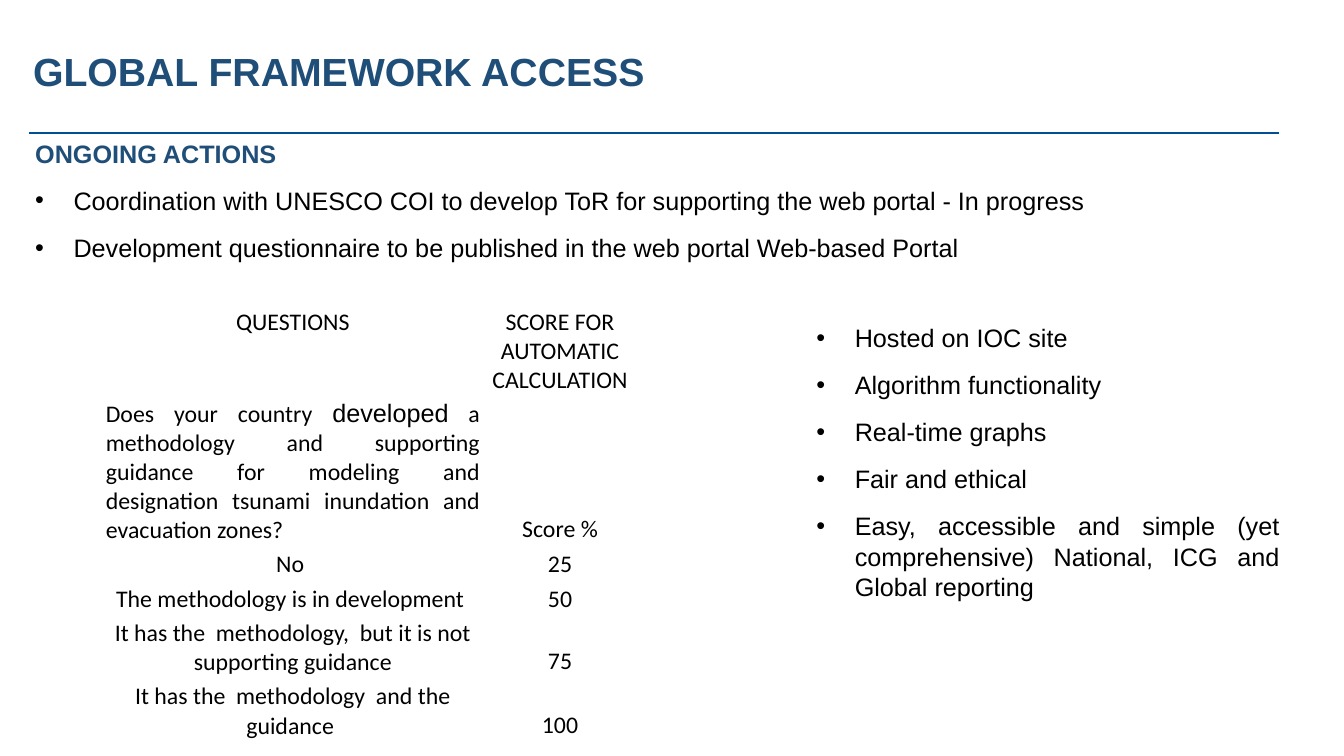
from lxml import etree
from pptx import Presentation
from pptx import util as u
from pptx.dml.color import RGBColor
from pptx.enum import shapes, text
from pptx.oxml.ns import qn

SLIDE_WIDTH, SLIDE_HEIGHT = u.Inches(13.33), u.Inches(7.5)
NAVY = RGBColor(0x1F, 0x4E, 0x79)
RULE_BLUE = RGBColor(0x01, 0x4F, 0x92)
BLACK = RGBColor(0x00, 0x00, 0x00)
LEFT, CENTER, JUSTIFY = (text.PP_ALIGN.LEFT, text.PP_ALIGN.CENTER,
                         text.PP_ALIGN.JUSTIFY)

ACTIONS = [
    "Coordination with UNESCO COI to develop ToR for supporting the web portal - In progress",
    "Development questionnaire to be published in the web portal Web-based Portal",
]
FEATURES = [
    "Hosted on IOC site",
    "Algorithm functionality",
    "Real-time graphs",
    "Fair and ethical",
    "Easy, accessible and simple (yet comprehensive) National, ICG and Global reporting",
]
HEADINGS = ("QUESTIONS", "SCORE FOR AUTOMATIC CALCULATION")
QUESTION = (
    "Does your country ",
    "developed",
    " a methodology and supporting guidance for modeling and designation"
    " tsunami inundation and evacuation zones?",
)
ANSWERS = [
    ("No ", "25"),
    ("The methodology is in development ", "50"),
    ("It has the  methodology,  but it is not supporting guidance", "75"),
    ("It has the  methodology  and the guidance ", "100"),
]


def across(percent):
    """Length as a percentage of the slide's width."""
    return round(SLIDE_WIDTH * percent / 100)


def down(percent):
    """Length as a percentage of the slide's height."""
    return round(SLIDE_HEIGHT * percent / 100)


def add_text(paragraph, wording, size=18, font="Arial", color=BLACK,
             bold=False, align=LEFT):
    paragraph.alignment = align
    run = paragraph.add_run()
    run.text = wording
    run.font.size = u.Pt(size)
    run.font.name = font
    run.font.color.rgb = color
    run.font.bold = bold


def next_paragraph(frame):
    """Return the first paragraph while it is unused, then new ones."""
    first = frame.paragraphs[0]
    return frame.add_paragraph() if first.runs else first


def space_around(paragraph):
    paragraph.space_before = paragraph.space_after = u.Pt(6)


def add_bullets(frame, items, indent, level=0):
    for item in items:
        paragraph = next_paragraph(frame)
        add_text(paragraph, item, align=JUSTIFY)
        space_around(paragraph)
        paragraph.level = level
        properties = paragraph._p.get_or_add_pPr()
        properties.set("marL", str(u.Inches(indent)))
        properties.set("indent", str(-u.Inches(0.38)))
        etree.SubElement(properties, qn("a:buFont")).set("typeface", "Arial")
        etree.SubElement(properties, qn("a:buChar")).set("char", "•")


def add_frame(slide, left, top, width, height):
    box = slide.shapes.add_textbox(across(left), down(top),
                                   across(width), down(height))
    box.text_frame.word_wrap = True
    return box.text_frame


def add_rule(slide, left, right, top):
    rule = slide.shapes.add_connector(
        shapes.MSO_CONNECTOR.STRAIGHT,
        across(left), down(top), across(right), down(top))
    rule.line.color.rgb = RULE_BLUE
    rule.line.width = u.Pt(1.75)
    etree.SubElement(rule._element.spPr, qn("a:effectLst"))


def fill_cell(cell, pieces, align=CENTER, anchor=text.MSO_ANCHOR.BOTTOM):
    """Write (wording, format) pieces into an unfilled cell."""
    cell.fill.background()
    cell.margin_left = cell.margin_top = cell.margin_right = u.Inches(0.01)
    cell.margin_bottom = u.Inches(0.05)
    cell.vertical_anchor = anchor
    for wording, style in pieces:
        add_text(cell.text_frame.paragraphs[0], wording, align=align, **style)


def add_questionnaire(slide, left, top, widths, heights):
    questionnaire = slide.shapes.add_table(
        len(heights), len(widths), across(left), down(top),
        across(sum(widths)), down(sum(heights))).table
    questionnaire.first_row = questionnaire.horz_banding = False
    for column, width in zip(questionnaire.columns, widths):
        column.width = across(width)
    for row, height in zip(questionnaire.rows, heights):
        row.height = down(height)

    regular = {"size": 17, "font": "Calibri"}
    upper = text.MSO_ANCHOR.TOP
    for column, heading in enumerate(HEADINGS):
        fill_cell(questionnaire.cell(0, column), [(heading, regular)],
                  anchor=upper)
    fill_cell(questionnaire.cell(1, 0),
              zip(QUESTION, (regular, {}, regular)), JUSTIFY, upper)
    fill_cell(questionnaire.cell(1, 1), [("Score %", regular)])
    for row, answer in enumerate(ANSWERS, start=2):
        for column, wording in enumerate(answer):
            fill_cell(questionnaire.cell(row, column), [(wording, regular)])


def main():
    deck = Presentation()
    deck.slide_width, deck.slide_height = SLIDE_WIDTH, SLIDE_HEIGHT
    slide = deck.slides.add_slide(deck.slide_layouts[6])

    add_rule(slide, 2.18, 95.2, 17.6)

    actions = add_frame(slide, 1.88, 17.6, 96.17, 18)
    subtitle = next_paragraph(actions)
    add_text(subtitle, "ONGOING ACTIONS", color=NAVY, bold=True)
    space_around(subtitle)
    add_bullets(actions, ACTIONS, indent=0.38)

    title = add_frame(slide, 1.73, 5.6, 93.1, 13.87)
    add_text(next_paragraph(title), "GLOBAL FRAMEWORK ACCESS",
             size=28, color=NAVY, bold=True)

    add_questionnaire(slide, 7.8, 40.53, widths=[27.98, 11.78],
                      heights=[8.8, 5.6] + [2.8] * len(ANSWERS))

    features = add_frame(slide, 52.51, 42, 43.44, 38.53)
    add_bullets(features, FEATURES, indent=1.38, level=2)

    deck.save("out.pptx")


if __name__ == "__main__":
    main()
